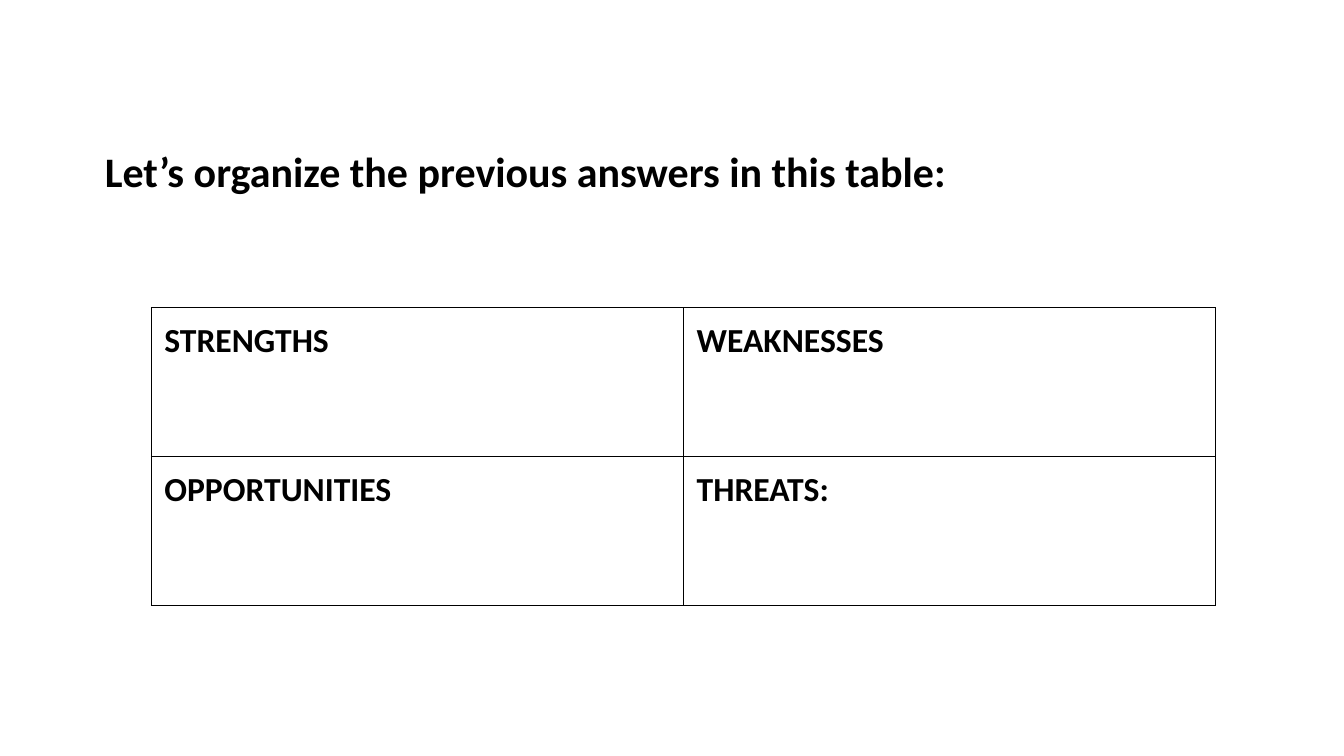
from dataclasses import dataclass

from lxml.etree import SubElement
from pptx import Presentation
from pptx.dml.color import RGBColor
from pptx.enum.text import MSO_ANCHOR as Anchor
from pptx.oxml.ns import qn
from pptx.util import Inches, Pt


@dataclass(frozen=True)
class Theme:
    font: str = "Calibri"
    ink: str = "000000"
    title_size: int = 30
    cell_size: int = 24
    border_width: float = 0.75
    inset: float = 0.13


class SlideBuilder:
    def __init__(self, page, theme):
        self.page = page
        self.theme = theme

    def set_text(self, holder, frame, text, size):
        """Fill a text frame with one bold paragraph; holder has the margins."""
        inset = Inches(self.theme.inset)
        holder.margin_left = holder.margin_right = inset
        holder.margin_top = holder.margin_bottom = inset
        holder.vertical_anchor = Anchor.TOP
        para = frame.paragraphs[0]
        para.text = text
        font = para.font
        font.name, font.size, font.bold = self.theme.font, Pt(size), True
        font.color.rgb = RGBColor.from_string(self.theme.ink)
        return para

    def heading(self, text, left, top, width, height):
        box = self.page.shapes.add_textbox(
            Inches(left), Inches(top), Inches(width), Inches(height))
        frame = box.text_frame
        frame.word_wrap = True
        para = self.set_text(frame, frame, text, self.theme.title_size)
        para.line_spacing = 0.9

    def outline(self, cell):
        """Draw all four borders of a cell."""
        properties = cell._tc.get_or_add_tcPr()
        for side in ("a:lnL", "a:lnR", "a:lnT", "a:lnB"):
            line = SubElement(properties, qn(side),
                              w=str(Pt(self.theme.border_width)))
            fill = SubElement(line, qn("a:solidFill"))
            SubElement(fill, qn("a:srgbClr"), val=self.theme.ink)

    def grid(self, rows, left, top, column_width, row_height):
        count = len(rows[0])
        table = self.page.shapes.add_table(
            len(rows), count, Inches(left), Inches(top),
            Inches(column_width * count), Inches(row_height * len(rows))).table
        table.first_row = table.horz_banding = False
        for column in table.columns:
            column.width = Inches(column_width)
        for row, labels in zip(table.rows, rows):
            row.height = Inches(row_height)
            for cell, label in zip(row.cells, labels):
                self.set_text(cell, cell.text_frame, label,
                              self.theme.cell_size)
                self.outline(cell)
                cell.fill.background()


def main():
    deck = Presentation()
    deck.slide_width, deck.slide_height = Inches(13.33), Inches(7.5)
    page = deck.slides.add_slide(deck.slide_layouts[6])
    builder = SlideBuilder(page, Theme())

    # Heading
    builder.heading("Let’s organize the previous answers in this table:",
                    0.91, 1.37, 12.42, 0.84)

    # SWOT table
    builder.grid([["STRENGTHS", "WEAKNESSES"],
                  ["OPPORTUNITIES", "THREATS:"]], 1.5, 3.05, 5.28, 1.48)

    deck.save("out.pptx")


if __name__ == "__main__":
    main()
